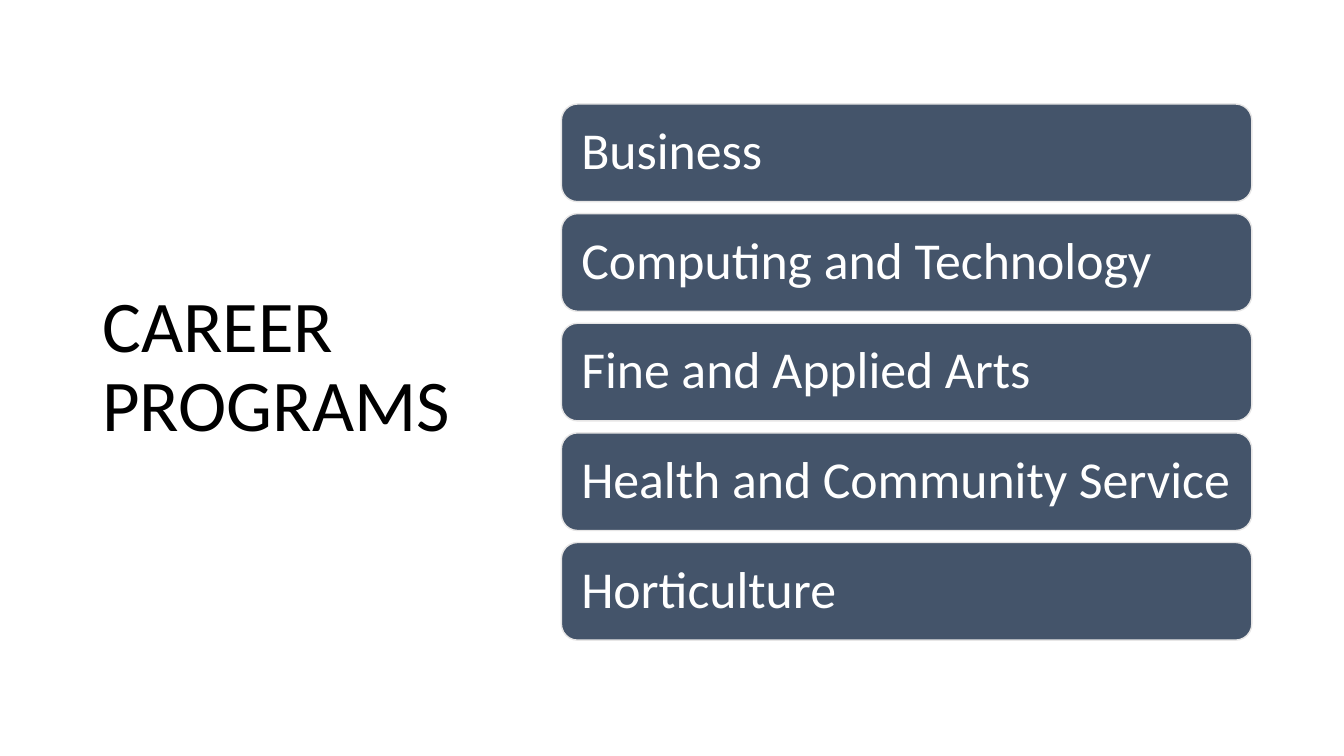
from dataclasses import dataclass
from pptx import Presentation
from pptx.dml.color import RGBColor
from pptx.enum.shapes import MSO_SHAPE
from pptx.enum.text import MSO_ANCHOR, PP_ALIGN
from pptx.shapes.autoshape import Shape
from pptx.slide import Slide
from pptx.util import Pt


@dataclass(frozen=True)
class Theme:
    font: str = "Calibri"
    title: float = 52
    label: float = 37
    dark: RGBColor = RGBColor(0, 0, 0)
    light: RGBColor = RGBColor(255, 255, 255)
    fill: RGBColor = RGBColor.from_string("44546A")
    edge: RGBColor = RGBColor.from_string("E7E6E6")


@dataclass(frozen=True)
class Bar:
    text: str
    top: float


THEME = Theme()
LEFT, TOP, WIDTH, HEIGHT, STEP = 401, 74.3, 493.2, 69.8, 78.3
NAMES = [
    "Business",
    "Computing and Technology",
    "Fine and Applied Arts",
    "Health and Community Service",
    "Horticulture",
]
BARS = [Bar(name, TOP + i * STEP) for i, name in enumerate(NAMES)]


def apply(target: object, values: dict) -> None:
    for name, value in values.items():
        setattr(target, name, value)


def write(shape: Shape, text: str, size: float, color: RGBColor, frame: dict) -> None:
    body = shape.text_frame
    apply(body, {"word_wrap": True, "vertical_anchor": MSO_ANCHOR.MIDDLE} | frame)
    para = body.paragraphs[0]
    para.text = text
    apply(para, {"alignment": PP_ALIGN.LEFT, "line_spacing": 0.9})
    apply(para.font, {"name": THEME.font, "size": Pt(size)})
    para.font.color.rgb = color


def draw_bar(slide: Slide, bar: Bar) -> None:
    shape = slide.shapes.add_shape(
        MSO_SHAPE.ROUNDED_RECTANGLE, Pt(LEFT), Pt(bar.top), Pt(WIDTH), Pt(HEIGHT)
    )
    shape.shadow.inherit = False
    shape.fill.solid()
    shape.fill.fore_color.rgb = THEME.fill
    shape.line.color.rgb = THEME.edge
    shape.line.width = Pt(1)
    inset = {
        "margin_left": Pt(10.8),
        "margin_right": Pt(6),
        "margin_top": Pt(0),
        "margin_bottom": Pt(0),
    }
    write(shape, bar.text, THEME.label, THEME.light, inset)


def main() -> None:
    deck = Presentation()
    apply(deck, {"slide_width": Pt(960), "slide_height": Pt(540)})
    slide = deck.slides.add_slide(deck.slide_layouts[6])

    # Title on the left
    title = slide.shapes.add_textbox(Pt(66), Pt(44), Pt(266), Pt(438.5))
    write(title, "CAREER PROGRAMS", THEME.title, THEME.dark, {})

    # Stack of program bars
    for bar in BARS:
        draw_bar(slide, bar)

    deck.save("out.pptx")


if __name__ == "__main__":
    main()
